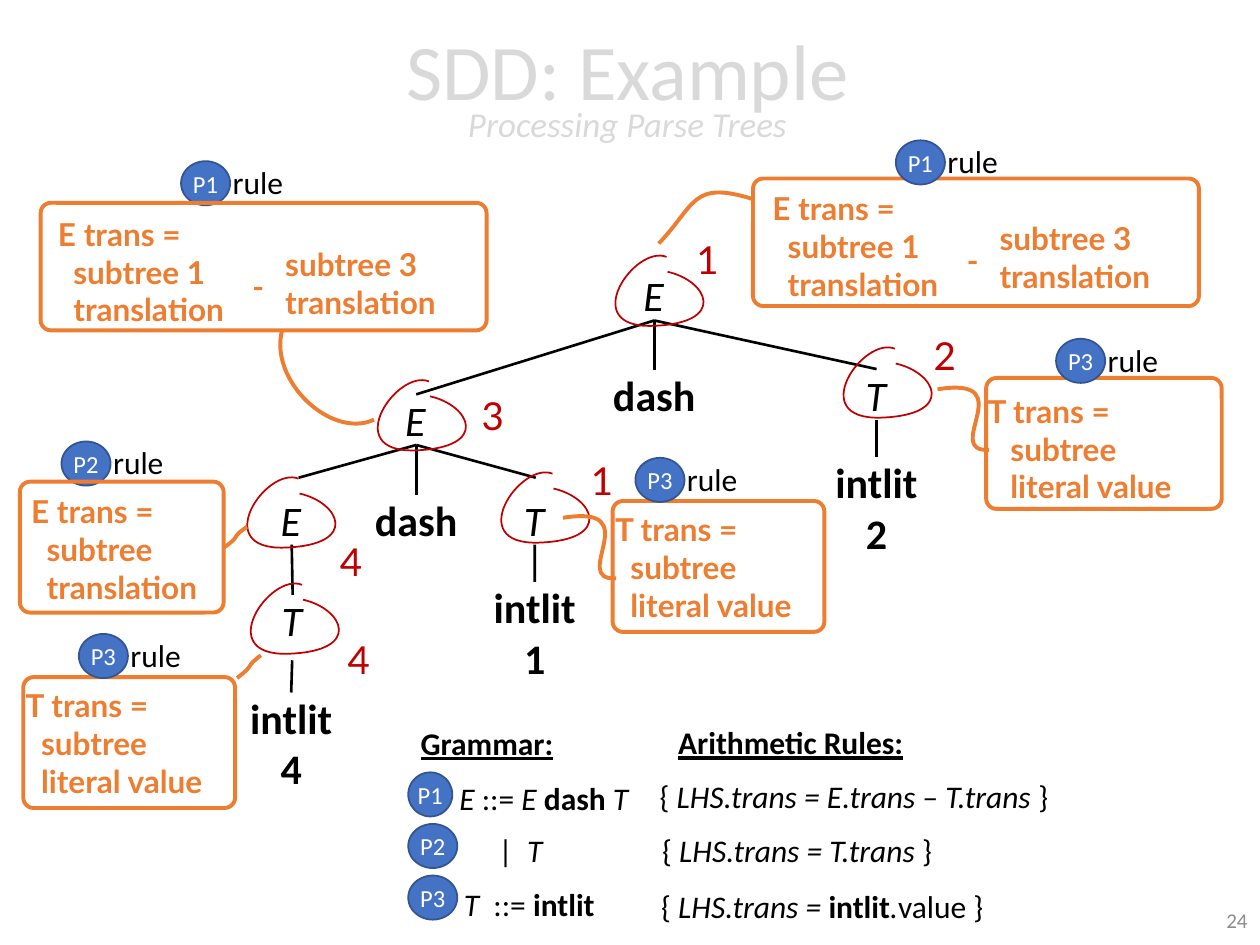
from dataclasses import dataclass

from lxml import etree
from pptx import Presentation
from pptx import util as u
from pptx.dml.color import RGBColor
from pptx.enum import shapes, text as t
from pptx.oxml import ns


@dataclass(frozen=True)
class Theme:
    ink = RGBColor.from_string("000000")
    white = RGBColor.from_string("FFFFFF")
    pale = RGBColor.from_string("D9D9D9")
    gray = RGBColor.from_string("8C8C8C")
    red = RGBColor.from_string("C00000")
    orange = RGBColor.from_string("ED7D31")
    blue = RGBColor.from_string("4472C4")
    navy = RGBColor.from_string("325491")
    body = "Calibri"
    accent = "Lato"
    title = 45
    node = 24
    value = 22
    subtitle = 20
    rule = 18
    badge = 14
    number = 12


theme = Theme()
presentation = Presentation()
presentation.slide_width = u.Cm(25.4)
presentation.slide_height = u.Cm(19.05)
slide = presentation.slides.add_slide(presentation.slide_layouts[6])


def add_text(text, *, at=None, shape=None, size=theme.rule, color=theme.ink, font=theme.body,
             style="", align=t.PP_ALIGN.LEFT, anchor=t.MSO_ANCHOR.TOP, inset=(0.25, 0.13),
             wrap=False, grow=True, indent=0, spacing=None):
    shape = shape or slide.shapes.add_textbox(*(u.Cm(length) for length in at))
    frame = shape.text_frame
    frame.word_wrap = wrap
    frame.auto_size = t.MSO_AUTO_SIZE.SHAPE_TO_FIT_TEXT if grow else t.MSO_AUTO_SIZE.NONE
    frame.vertical_anchor = anchor
    frame.margin_left = frame.margin_right = u.Cm(inset[0])
    frame.margin_top = frame.margin_bottom = u.Cm(inset[1])
    lines = [[(line, style)] for line in text.split("\n")] if isinstance(text, str) else [text]
    for index, line in enumerate(lines):
        paragraph = frame.add_paragraph() if index else frame.paragraphs[0]
        paragraph.alignment = align
        paragraph.line_spacing = spacing
        if index and indent:
            paragraph._p.get_or_add_pPr().set("marL", str(u.Cm(indent)))
        for words, look in line:
            run = paragraph.add_run()
            run.text = words
            run.font.size = u.Pt(size)
            run.font.name = font
            run.font.color.rgb = color
            run.font.bold = "b" in look
            run.font.italic = "i" in look
            run.font.underline = "u" in look
    return shape


def draw_curve(points, color, width, steps=24):
    outline = []
    for first in range(0, len(points) - 1, 3):
        for step in range(steps + 1):
            s = step / steps
            weights = ((1 - s) ** 3, 3 * s * (1 - s) ** 2, 3 * s * s * (1 - s), s ** 3)
            corners = points[first:first + 4]
            outline.append(tuple(u.Cm(sum(w * corner[axis] for w, corner in zip(weights, corners)))
                                 for axis in (0, 1)))
    builder = slide.shapes.build_freeform(*outline[0])
    builder.add_line_segments(outline[1:], close=False)
    curve = builder.convert_to_shape()
    route = curve._element.find(".//" + ns.qn("a:path"))
    for segment in list(route):
        route.remove(segment)
    for index, (x, y) in enumerate(points):
        if index % 3 == 1 or index == 0:
            segment = etree.SubElement(route, ns.qn("a:cubicBezTo" if index else "a:moveTo"))
        etree.SubElement(segment, ns.qn("a:pt"), x=str(u.Cm(x) - curve.left),
                         y=str(u.Cm(y) - curve.top))
    curve.shadow.inherit = False
    curve.fill.background()
    curve.line.color.rgb = color
    curve.line.width = u.Pt(width)


add_text("24", at=(19.69, 18.03, 5.71, 1.02), size=theme.number, color=theme.gray,
         align=t.PP_ALIGN.RIGHT, anchor=t.MSO_ANCHOR.MIDDLE, wrap=True, grow=False)
title = add_text("SDD: Example\nProcessing Parse Trees", at=(0.51, 0.08, 24.28, 3.68),
                 size=theme.title, color=theme.pale, align=t.PP_ALIGN.CENTER,
                 anchor=t.MSO_ANCHOR.MIDDLE, wrap=True, grow=False, spacing=0.7)
subtitle = title.text_frame.paragraphs[1].runs[0].font
subtitle.size = u.Pt(theme.subtitle)
subtitle.italic = True

nodes = {}
for name, label, center, top in (
    ("root", "E", 13.19, 5.44), ("root dash", "dash", 13.19, 7.45),
    ("right T", "T", 17.67, 7.44), ("two", "intlit\n2", 17.67, 9.21),
    ("middle E", "E", 8.39, 7.95), ("middle dash", "dash", 8.39, 9.97),
    ("left E", "E", 5.88, 9.96), ("middle T", "T", 10.78, 9.96),
    ("one", "intlit\n1", 10.78, 11.73), ("left T", "T", 5.9, 11.99),
    ("four", "intlit\n4", 5.87, 13.96),
):
    letter = len(label) == 1
    width = 0.94 if letter else 2.18
    height = 2.06 if "\n" in label else 1.02
    nodes[name] = add_text(label, at=(center - width / 2, top, width, height), size=theme.node,
                           style="i" if letter else "b", inset=(0.25, 0),
                           align=t.PP_ALIGN.LEFT if letter else t.PP_ALIGN.CENTER)

for start, end in (
    ("root", "middle E"), ("root", "root dash"), ("root", "right T"), ("right T", "two"),
    ("middle E", (6.02, 9.63)), ("middle E", "middle dash"), ("middle E", (10.8, 9.63)),
    ("middle T", "one"), ("left E", "left T"), ((5.89, 13.31), "four"),
):
    free_end = next((end_point for end_point in (start, end) if end_point not in nodes), (0, 0))
    point = [u.Cm(length) for length in free_end]
    branch = slide.shapes.add_connector(shapes.MSO_CONNECTOR.STRAIGHT, *point, *point)
    if start in nodes:
        branch.begin_connect(nodes[start], 2)
    if end in nodes:
        branch.end_connect(nodes[end], 0)
    branch.line.color.rgb = theme.ink
    branch.line.width = u.Pt(1.5)
    etree.SubElement(branch._element.spPr, ns.qn("a:effectLst"))

loop = ((1.02, 0.03), (0.38, -0.23), (-0.79, 1.47), (0.74, 1.42),
        (2.26, 1.37), (1.85, 0.51), (1.04, 0.33))
for left, top, value, value_left, value_top in (
    (12.42, 5.15, "1", 13.79, 4.62), (17.02, 7, "2", 18.57, 6.56),
    (7.63, 7.66, "3", 9.46, 7.77), (5, 9.62, "4", 6.6, 10.72),
    (10.12, 9.52, "1", 11.66, 9.08), (5.07, 11.76, "4", 6.76, 12.7),
):
    draw_curve([(left + x, top + y) for x, y in loop], theme.red, 1)
    add_text(value, at=(value_left, value_top, 0.9, 1.19), size=theme.value,
             color=theme.red, font=theme.accent)

orange_text = dict(color=theme.orange, font=theme.accent, style="b")
difference = "E trans =\nsubtree 1\ntranslation"
literal = "T trans =\nsubtree\nliteral value"
badges = [("P1", 8.23, 15.57, 0.89, False), ("P2", 8.23, 16.61, 0.99, False),
          ("P3", 8.23, 17.65, 0.99, False)]
covering_boxes = []
for label, badge, box, words, corner, indent, covers, curve in (
    ("P1", (18.06, 2.83), (15.18, 3.6, 8.99, 2.57), difference, (15.32, 3.68), 0.31, False,
     ((15.16, 4.01), (13.94, 3.63), (14.02, 4.14), (13.28, 4.91))),
    ("P1", (3.65, 3.25), (0.82, 4.09, 8.99, 2.57), difference, (0.92, 4.2), 0.31, True,
     ((5.69, 6.65), (5.41, 7.67), (6.68, 8.86), (7.54, 8.46))),
    ("P3", (21.29, 6.83), (19.88, 7.62, 4.75, 2.64), literal, (19.66, 7.77), 0.46, False,
     ((19.94, 9.07), (18.97, 9.12), (20.62, 7.57), (18.9, 7.85))),
    ("P3", (12.81, 9.23), (12.35, 10.1, 4.27, 2.64), literal, (12.15, 10.16), 0.31, False,
     ((12.42, 11.66), (11.46, 11.71), (13.08, 10.16), (11.35, 10.44))),
    ("P2", (1.24, 8.9), (0.4, 9.71, 4.11, 2.64), "E trans =\nsubtree\ntranslation",
     (0.38, 9.79), 0.31, True, ((4.98, 10.62), (4.62, 10.87), (4.9, 10.77), (4.5, 11.05))),
    ("P3", (1.59, 12.78), (0.47, 13.65, 4.27, 2.64), literal, (0.27, 13.7), 0.31, False,
     ((5.26, 13.21), (4.9, 13.49), (5.18, 13.36), (4.78, 13.67))),
):
    frame = slide.shapes.add_shape(shapes.MSO_SHAPE.ROUNDED_RECTANGLE,
                                   *(u.Cm(length) for length in box))
    frame.adjustments[0] = 0.08
    frame.shadow.inherit = False
    frame.fill.background()
    frame.line.color.rgb = theme.orange
    frame.line.width = u.Pt(2.25)
    if covers:
        covering_boxes.append(frame)
    add_text(words, at=(*corner, 4.3, 2.57), indent=indent, **orange_text)
    if words == difference:
        add_text("-", at=(corner[0] + 3.92, corner[1] + 1.05, 0.81, 1.02), **orange_text)
        add_text("subtree 3\ntranslation", at=(corner[0] + 4.58, corner[1] + 0.61, 4, 1.8),
                 **orange_text)
    draw_curve(curve, theme.orange, 2.25)
    badges.append((label, *badge, 0.99, True))

for label, left, top, width, named in badges:
    badge = slide.shapes.add_shape(shapes.MSO_SHAPE.OVAL, u.Cm(left), u.Cm(top),
                                   u.Cm(width), u.Cm(0.89))
    badge.shadow.inherit = False
    badge.fill.solid()
    badge.fill.fore_color.rgb = theme.blue
    badge.line.color.rgb = theme.navy
    badge.line.width = u.Pt(1)
    add_text(label, shape=badge, size=theme.badge, color=theme.white, inset=(0, 0), wrap=True,
             grow=False, align=t.PP_ALIGN.CENTER, anchor=t.MSO_ANCHOR.MIDDLE)
    if named:
        add_text("rule", at=(left + 0.79, top - 0.09, 1.55, 1.02))

for frame in covering_boxes:
    slide.shapes._spTree.append(frame._element)

for words, left, top, width in (
    ([("Grammar:", "bu")], 8.23, 14.46, 3.48),
    ([("Arithmetic Rules:", "bu")], 13.42, 14.45, 7.82),
    ([("E ", "i"), ("::=", ""), (" E ", "i"), ("dash", "b"), (" T", "i")], 9.01, 15.58, 12.37),
    ([("|", ""), ("  T", "i")], 9.8, 16.63, 11.58),
    ([("T  ", "i"), ("::= ", ""), ("intlit", "b")], 9.1, 17.72, 12.27),
    ([("{ ", ""), ("LHS.trans = E.trans – T.trans ", "i"), ("}", "")], 13.05, 15.54, 8.41),
    ([("{ ", ""), ("LHS.trans = T.trans ", "i"), ("}", "")], 13.1, 16.62, 5.99),
    ([("{ ", ""), ("LHS.trans = ", "i"), ("intlit", "b"), (".", "i"), ("value }", "")],
     13.08, 17.75, 7.09),
):
    add_text(words, at=(left, top, width, 1.02), wrap=True)

presentation.save("out.pptx")
